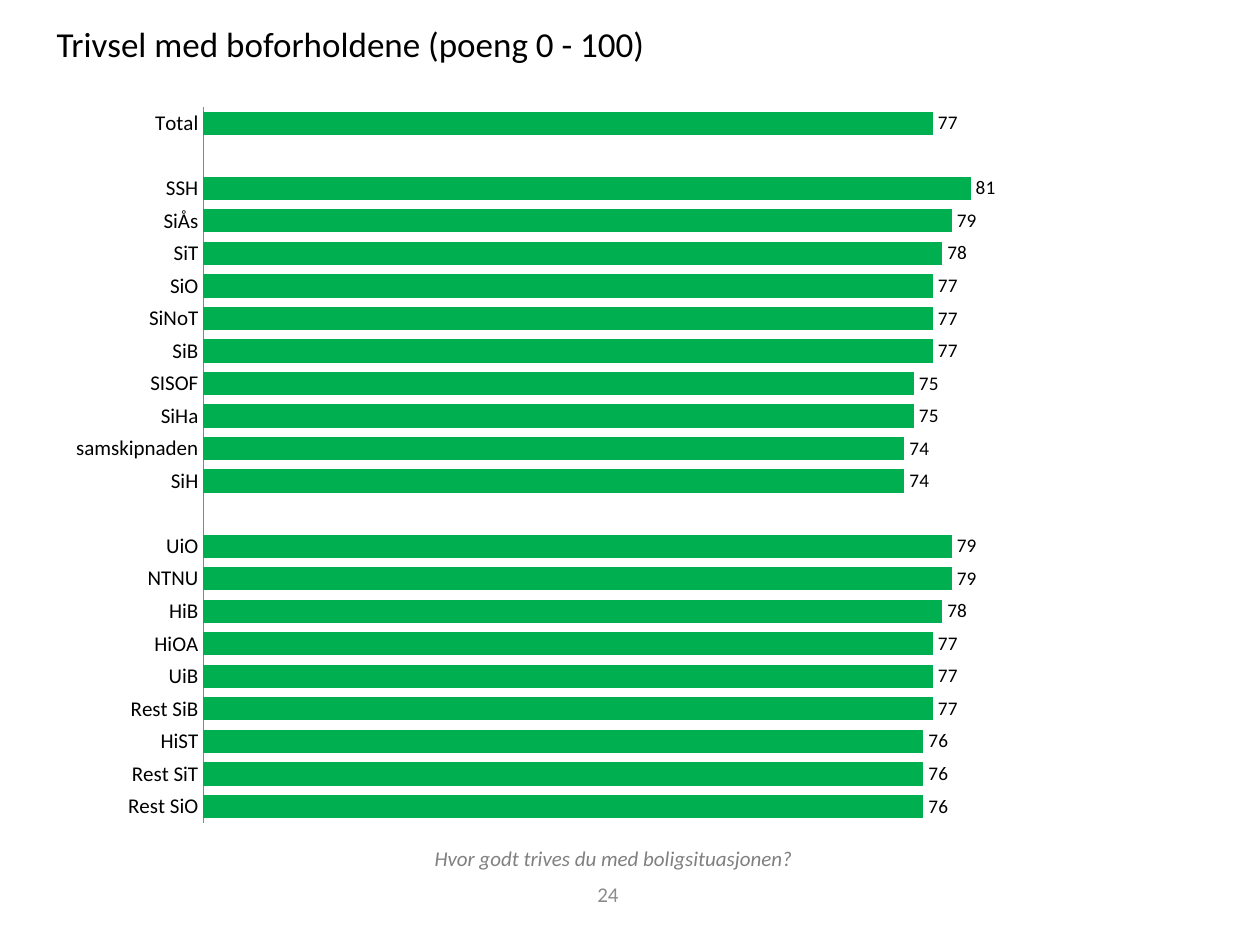
from dataclasses import dataclass

import pptx
import pptx.chart.data
import pptx.dml.color
import pptx.enum.chart
import pptx.enum.text
import pptx.oxml
import pptx.oxml.ns
import pptx.util
from pptx.util import Inches

RGB = pptx.dml.color.RGBColor.from_string
ALIGN = pptx.enum.text.PP_ALIGN
ANCHOR = pptx.enum.text.MSO_ANCHOR

GROUPS = [
    [("Total", 77)],
    [("SSH", 81), ("SiÅs", 79), ("SiT", 78), ("SiO", 77), ("SiNoT", 77),
     ("SiB", 77), ("SISOF", 75), ("SiHa", 75), ("samskipnaden", 74), ("SiH", 74)],
    [("UiO", 79), ("NTNU", 79), ("HiB", 78), ("HiOA", 77), ("UiB", 77),
     ("Rest SiB", 77), ("HiST", 76), ("Rest SiT", 76), ("Rest SiO", 76)],
]


@dataclass(frozen=True)
class Theme:
    """Colours and type sizes of the slide."""
    font: str = "Calibri"
    text: str = "000000"
    question: str = "808080"
    number: str = "8C8C8C"
    axis: str = "868686"
    bar: str = "00B050"
    title_size: int = 20
    chart_size: int = 18
    small_size: int = 12
    label_size: int = 11


THEME = Theme()


def style_font(font, size, color, italic=None):
    """Set face, size, colour and slant of a font."""
    font.name = THEME.font
    font.size = pptx.util.Pt(size)
    font.color.rgb = RGB(color)
    font.italic = italic


def add_text(page, place, text, size, color, italic=None, wrap=False,
             align=ALIGN.LEFT, anchor=ANCHOR.TOP):
    """Add a text box with one paragraph."""
    box = page.shapes.add_textbox(*map(Inches, place))
    frame = box.text_frame
    frame.word_wrap = wrap
    frame.vertical_anchor = anchor
    if not wrap:
        frame.auto_size = pptx.enum.text.MSO_AUTO_SIZE.SHAPE_TO_FIT_TEXT
    para = frame.paragraphs[0]
    para.text = text
    para.alignment = align
    style_font(para.font, size, color, italic)


def set_plot_layout(chart, left, top, width, height):
    """Fix the inner plot area as fractions of the chart."""
    plot_area = chart.plots[0]._element.getparent()
    for old in plot_area.findall(pptx.oxml.ns.qn("c:layout")):
        plot_area.remove(old)
    fields = [("layoutTarget", "inner"), ("xMode", "edge"), ("yMode", "edge"),
              ("x", left), ("y", top), ("w", width), ("h", height)]
    inner = "".join(f'<c:{name} val="{value}"/>' for name, value in fields)
    layout = pptx.oxml.parse_xml(
        f'<c:layout {pptx.oxml.ns.nsdecls("c")}>'
        f"<c:manualLayout>{inner}</c:manualLayout></c:layout>")
    plot_area.insert(0, layout)


def style_axes(chart):
    """Show the categories from the top down and hide the value scale."""
    categories = chart.category_axis
    categories.reverse_order = True
    categories.has_major_gridlines = False
    categories.major_tick_mark = pptx.enum.chart.XL_TICK_MARK.NONE
    categories.format.line.color.rgb = RGB(THEME.axis)
    style_font(categories.tick_labels.font, THEME.small_size, THEME.text)
    values = chart.value_axis
    values.visible = False
    values.has_major_gridlines = False
    values.minimum_scale = 0
    values.maximum_scale = 100
    values.major_unit = 10


def add_bar_chart(page, place, groups):
    """Add a bar chart with an empty row between groups."""
    rows = list(groups[0])
    for group in groups[1:]:
        rows += [("", None), *group]
    data = pptx.chart.data.CategoryChartData()
    data.categories = [name for name, score in rows]
    data.add_series("Series 1", [score for name, score in rows])
    chart = page.shapes.add_chart(
        pptx.enum.chart.XL_CHART_TYPE.BAR_CLUSTERED,
        *map(Inches, place), data).chart
    chart.has_title = False
    chart.has_legend = False
    style_font(chart.font, THEME.chart_size, THEME.text)
    style_axes(chart)
    set_plot_layout(chart, 0.142, 0.025, 0.845, 0.95)
    plot = chart.plots[0]
    plot.gap_width = 40
    plot.vary_by_categories = False
    series = plot.series[0]
    series.format.fill.solid()
    series.format.fill.fore_color.rgb = RGB(THEME.bar)
    labels = series.data_labels
    labels.show_value = True
    labels.number_format = "#,##0"
    labels.number_format_is_linked = False
    labels.position = pptx.enum.chart.XL_LABEL_POSITION.OUTSIDE_END
    style_font(labels.font, THEME.label_size, THEME.text)


def main():
    """Build and save the slide."""
    deck = pptx.Presentation()
    deck.slide_width = Inches(10)
    deck.slide_height = Inches(7.5)
    page = deck.slides.add_slide(deck.slide_layouts[6])
    add_text(page, (3.66, 6.9, 2.33, 0.4), "24", THEME.small_size, THEME.number,
             wrap=True, align=ALIGN.CENTER, anchor=ANCHOR.MIDDLE)
    add_text(page, (0.35, 0.13, 4.91, 0.44),
             "Trivsel med boforholdene (poeng 0 - 100)",
             THEME.title_size, THEME.text)
    add_bar_chart(page, (0.35, 0.7, 8.9, 5.98), GROUPS)
    add_text(page, (3.35, 6.66, 3.09, 0.3),
             "Hvor godt trives du med boligsituasjonen?",
             THEME.small_size, THEME.question, italic=True)
    deck.save("out.pptx")


if __name__ == "__main__":
    main()
